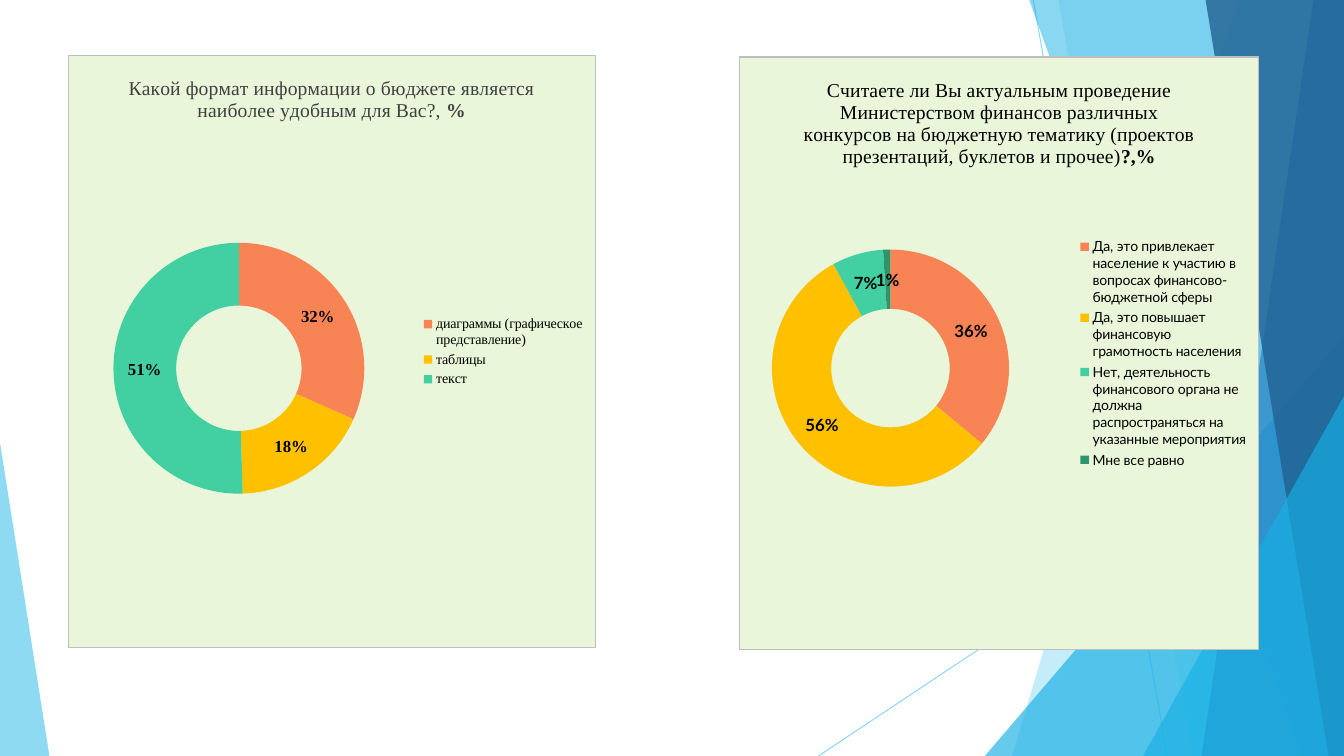
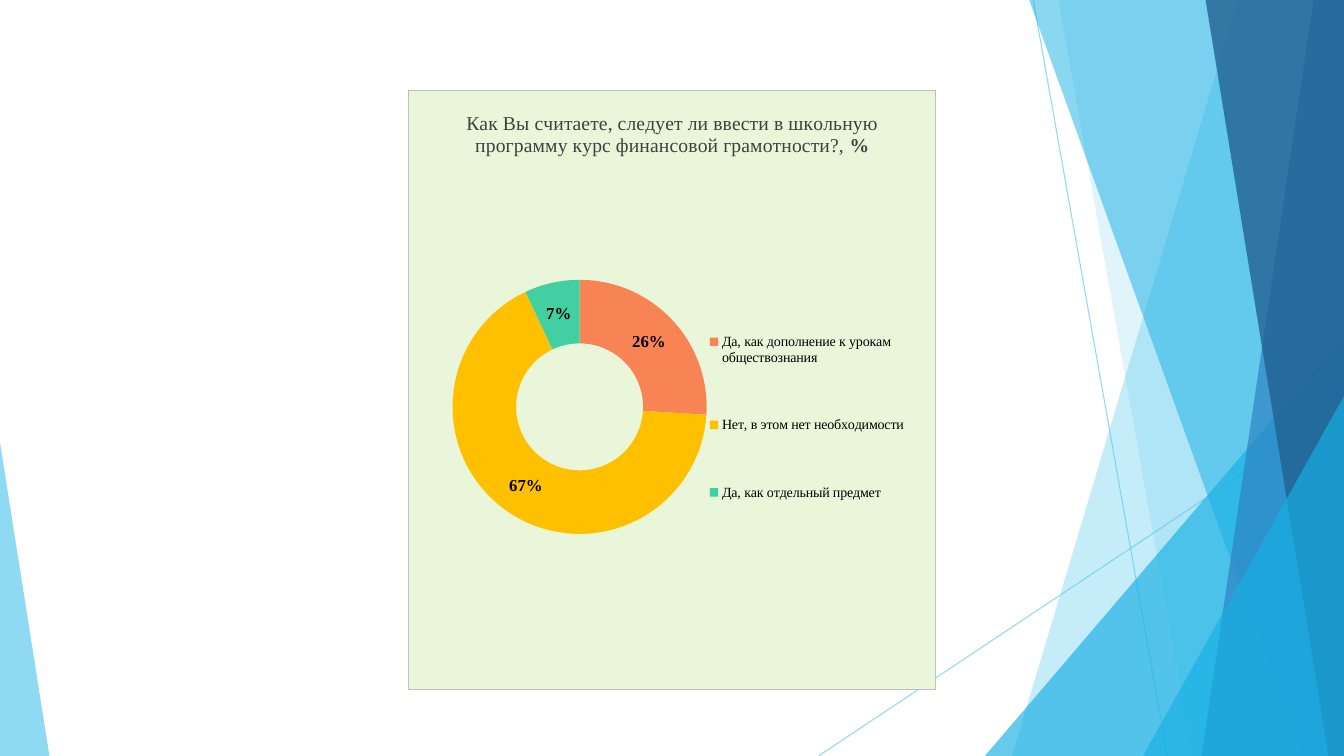
from lxml import etree
from pptx import Presentation
from pptx.chart.data import CategoryChartData
from pptx.dml.color import RGBColor
from pptx.enum.chart import XL_CHART_TYPE, XL_LEGEND_POSITION
from pptx.enum.shapes import MSO_CONNECTOR, MSO_SHAPE
from pptx.oxml import parse_xml
from pptx.oxml.ns import nsdecls, qn
from pptx.util import Inches, Pt

DOUGHNUT = XL_CHART_TYPE.DOUGHNUT
LEGEND_RIGHT = XL_LEGEND_POSITION.RIGHT
STRAIGHT = MSO_CONNECTOR.STRAIGHT
TRIANGLE = MSO_SHAPE.ISOSCELES_TRIANGLE

COLORS = {
    "sky": "5FCBEF", "cyan": "17B0E4", "blue": "2E83C3", "navy": "226292",
    "panel": "EAF6D9", "border": "BFBFBF", "gray": "404040", "black": "000000",
    "coral": "F88456", "amber": "FFC000", "mint": "42D0A2", "green": "2E946B",
}
SLICES = ("coral", "amber", "mint", "green")
SERIF = "Times New Roman"
SANS = "Lato"
WIDE_PLOT = (0.083, 0.316, 0.482, 0.424)


def rgb(name):
    return RGBColor.from_string(COLORS[name])


class SurveyDeck:
    """Survey slides laid out in percent of the slide's width and height."""

    def __init__(self):
        self.deck = Presentation()
        self.deck.slide_width = Inches(13.33)
        self.deck.slide_height = Inches(7.5)
        self.slide = None

    def x(self, percent):
        return round(self.deck.slide_width * percent / 100)

    def y(self, percent):
        return round(self.deck.slide_height * percent / 100)

    def new_slide(self):
        self.slide = self.deck.slides.add_slide(self.deck.slide_layouts[6])
        self.ray(76.88, 0, 86.86, 100)
        self.ray(100, 53.73, 60.9, 100)
        self.band(92.1, 75.3, "sky", 36)
        self.band(78.75, 88.73, "sky", 20)
        self.corner(73.28, 44.4, 26.72, 1, "cyan", 66)
        self.band(76.58, 96.83, "cyan", 50)
        self.band(97.73, 89.4, "blue", 70)
        self.band(89.7, 98.85, "navy", 80)
        self.corner(85.05, 52.4, 14.95, 1, "cyan", 66)
        self.corner(0, 58.53, 3.68, 0, "sky", 70)

    def set_alpha(self, shape, percent):
        for color in shape.element.spPr.xpath(".//a:srgbClr"):
            etree.SubElement(color, qn("a:alpha"), val=str(percent * 1000))

    def tint(self, shape, color, opacity):
        shape.shadow.inherit = False
        shape.fill.solid()
        shape.fill.fore_color.rgb = rgb(color)
        shape.line.fill.background()
        self.set_alpha(shape, opacity)

    def ray(self, x1, y1, x2, y2):
        ray = self.slide.shapes.add_connector(
            STRAIGHT, self.x(x1), self.y(y1), self.x(x2), self.y(y2))
        ray.line.color.rgb = rgb("sky")
        ray.line.width = Pt(0.75)
        self.set_alpha(ray, 70)
        etree.SubElement(ray.element.spPr, qn("a:effectLst"))

    def band(self, top_x, bottom_x, color, opacity):
        outline = self.slide.shapes.build_freeform(self.x(top_x), 0)
        outline.add_line_segments([
            (self.x(100), 0), (self.x(100), self.y(100)),
            (self.x(bottom_x), self.y(100))])
        self.tint(outline.convert_to_shape(), color, opacity)

    def corner(self, left, top, width, apex, color, opacity):
        corner = self.slide.shapes.add_shape(
            TRIANGLE, self.x(left), self.y(top), self.x(width), self.y(100 - top))
        corner.adjustments[0] = apex
        self.tint(corner, color, opacity)

    def place(self, part, index, box):
        for previous in part.xpath("c:layout"):
            part.remove(previous)
        inner = '<c:layoutTarget val="inner"/>' if index == 0 else ""
        modes = "".join(f'<c:{axis}Mode val="edge"/>' for axis in "xy")
        sizes = "".join(f'<c:{side} val="{share}"/>' for side, share in zip("xywh", box))
        part.insert(index, parse_xml(
            f'<c:layout {nsdecls("c")}><c:manualLayout>{inner}{modes}{sizes}'
            "</c:manualLayout></c:layout>"))

    def panel(self, chart):
        chart.element.xpath("c:txPr")[0].addprevious(parse_xml(
            f'<c:spPr {nsdecls("c", "a")}>'
            f'<a:solidFill><a:srgbClr val="{COLORS["panel"]}"/></a:solidFill>'
            f'<a:ln w="{Pt(0.75)}"><a:solidFill><a:srgbClr val="{COLORS["border"]}"/>'
            "</a:solidFill></a:ln></c:spPr>"))

    def title(self, chart, question, unit, color):
        chart.has_title = True
        chart.chart_title.include_in_layout = False
        paragraph = chart.chart_title.text_frame.paragraphs[0]
        for words, bold in ((question, False), (unit, True)):
            run = paragraph.add_run()
            run.text = words
            run.font.name = SERIF
            run.font.size = Pt(14)
            run.font.bold = bold
            run.font.color.rgb = rgb(color)

    def style_text(self, font, family, size, bold=False):
        font.name = family
        font.size = Pt(size)
        font.bold = bold
        font.color.rgb = rgb("black")

    def doughnut(self, box, question, unit, answers, plot_box=WIDE_PLOT,
                 family=SERIF, title_color="gray", legend_box=None):
        left, top, width, height = box
        data = CategoryChartData()
        data.categories = list(answers)
        data.add_series("Series 1", list(answers.values()))
        chart = self.slide.shapes.add_chart(
            DOUGHNUT, self.x(left), self.y(top), self.x(width), self.y(height), data).chart
        self.style_text(chart.font, family, 10)
        self.panel(chart)
        self.title(chart, question, unit, title_color)

        chart.has_legend = True
        chart.legend.position = LEGEND_RIGHT
        chart.legend.include_in_layout = False
        self.style_text(chart.legend.font, family, 10)
        if legend_box:
            self.place(chart.element.xpath(".//c:legend")[0], 1, legend_box)
        self.place(chart.element.xpath(".//c:plotArea")[0], 0, plot_box)

        plot = chart.plots[0]
        plot.vary_by_categories = True
        plot.has_data_labels = True
        labels = plot.data_labels
        labels.show_percentage = False
        labels.show_value = True
        labels.number_format = '0"%"'
        labels.number_format_is_linked = False
        self.style_text(labels.font, family, 12, bold=True)
        for index, color in enumerate(SLICES[:len(answers)]):
            piece = plot.series[0].points[index].format
            piece.fill.solid()
            piece.fill.fore_color.rgb = rgb(color)
            piece.line.fill.background()


def main():
    survey = SurveyDeck()

    survey.new_slide()
    survey.doughnut(
        (5.03, 7.33, 39.3, 78.4),
        "Какой формат информации о бюджете является наиболее удобным для Вас?, ", "%",
        {"диаграммы (графическое представление)": 32, "таблицы": 18, "текст": 51})
    survey.doughnut(
        (55, 7.47, 38.7, 78.53),
        "Считаете ли Вы актуальным проведение Министерством финансов различных "
        "конкурсов на бюджетную тематику (проектов презентаций, буклетов и прочее)", "?,%",
        {"Да, это привлекает население к участию в вопросах финансово-бюджетной сферы": 36,
         "Да, это повышает финансовую грамотность населения": 56,
         "Нет, деятельность финансового органа не должна распространяться "
         "на указанные мероприятия": 7,
         "Мне все равно": 1},
        plot_box=(0.062, 0.325, 0.457, 0.4), family=SANS, title_color="black")

    survey.new_slide()
    survey.doughnut(
        (30.38, 11.87, 39.3, 79.47),
        "Как Вы считаете, следует ли ввести в школьную программу курс "
        "финансовой грамотности?, ", "%",
        {"Да, как дополнение к урокам обществознания": 26,
         "Нет, в этом нет необходимости": 67,
         "Да, как отдельный предмет": 7},
        legend_box=(0.57, 0.32, 0.37, 0.45))

    survey.deck.save("out.pptx")


if __name__ == "__main__":
    main()
